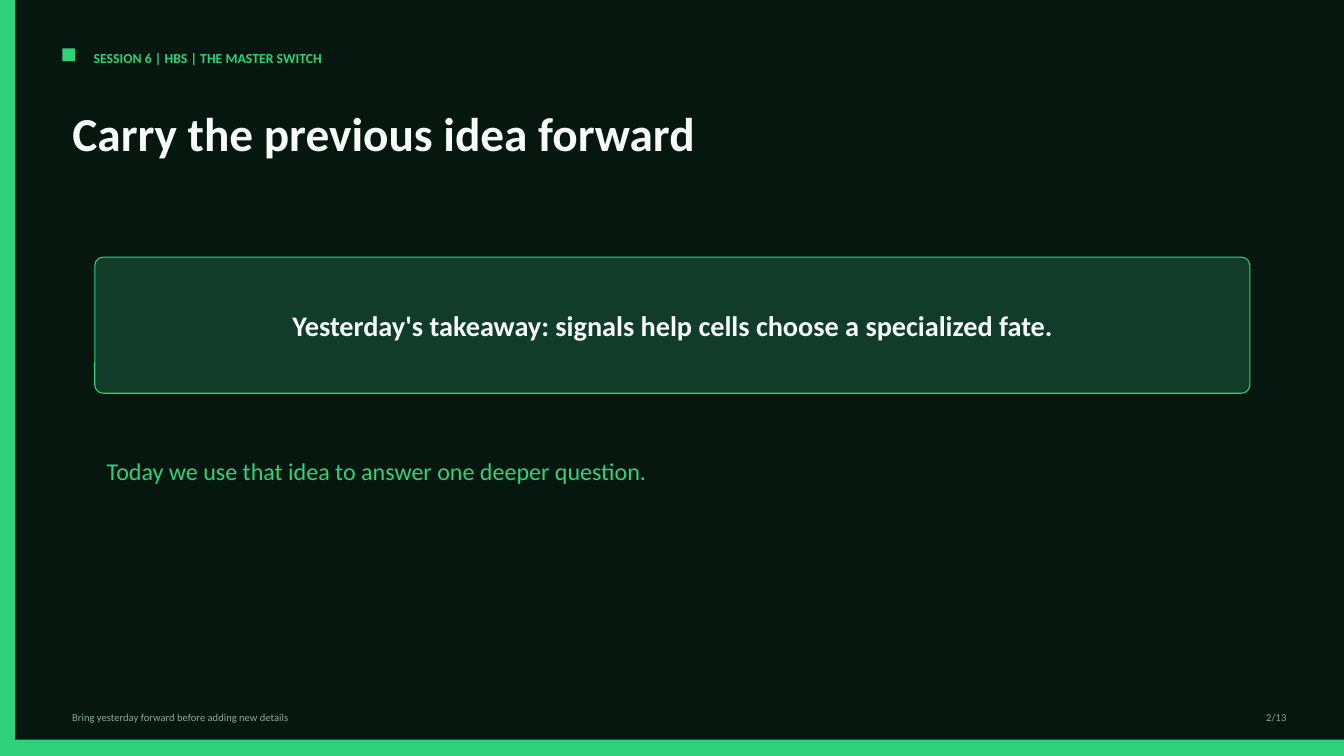
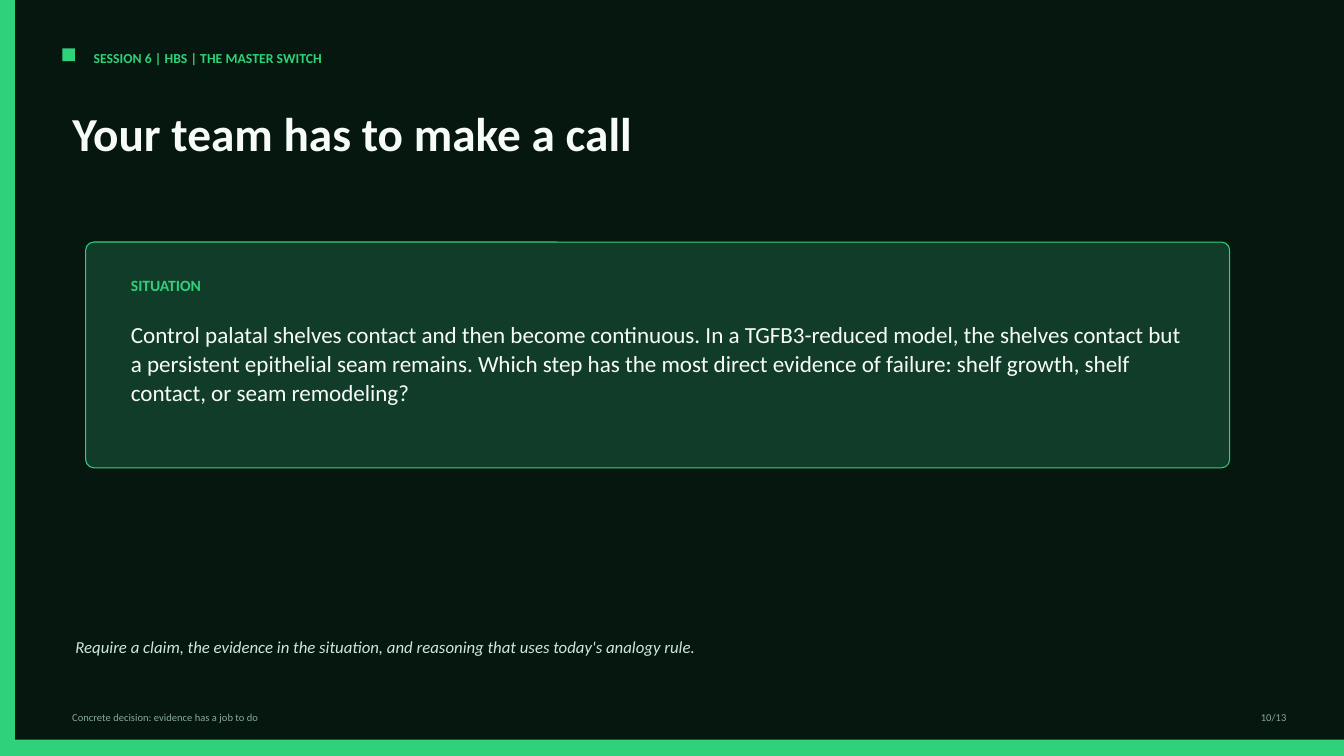
from pptx import Presentation
from pptx.dml.color import RGBColor
from pptx.enum.shapes import MSO_SHAPE
from pptx.enum.text import MSO_ANCHOR, MSO_AUTO_SIZE, PP_ALIGN
from pptx.util import Cm, Pt

RECT, ROUNDED = MSO_SHAPE.RECTANGLE, MSO_SHAPE.ROUNDED_RECTANGLE
TOP, MIDDLE = MSO_ANCHOR.TOP, MSO_ANCHOR.MIDDLE
LEFT, CENTER, RIGHT = PP_ALIGN.LEFT, PP_ALIGN.CENTER, PP_ALIGN.RIGHT
NO_AUTOFIT = MSO_AUTO_SIZE.NONE

BACKGROUND = RGBColor(0x06, 0x17, 0x0F)
GREEN = RGBColor(0x2F, 0xD2, 0x7A)
CARD_GREEN = RGBColor(0x12, 0x3C, 0x2A)
WHITE = RGBColor(0xF7, 0xFC, 0xF9)
PALE = RGBColor(0xCD, 0xE9, 0xDA)
MUTED = RGBColor(0x87, 0xAB, 0x9A)

FONT = "Calibri"
SLIDE_W, SLIDE_H = 33.87, 19.05
SIDE_BAR_W, BOTTOM_BAR_H = 0.38, 0.41
MARGIN, MARKER = 1.57, 0.32
FOOTER_Y, FOOTER_H = 17.78, 0.48
CARD_RADIUS = 0.21

KICKER = "SESSION 6 | HBS | THE MASTER SWITCH"
TOTAL = 13

# Boxes are (left, top, width, height) in centimetres.
SLIDES = [
    dict(
        number=2,
        title="Carry the previous idea forward",
        footer="Bring yesterday forward before adding new details",
        card=(2.39, 6.48, 29.11, 3.43),
        card_text="Yesterday's takeaway: signals help cells choose a specialized fate.",
        texts=[
            ("Today we use that idea to answer one deeper question.",
             (2.44, 11.38, 26.47, 1.17), dict(size=17.2, color=GREEN)),
        ],
    ),
    dict(
        number=10,
        title="Your team has to make a call",
        footer="Concrete decision: evidence has a job to do",
        card=(2.16, 6.1, 28.83, 5.69),
        card_text=None,
        texts=[
            ("SITUATION", (3.05, 6.83, 6.88, 0.66),
             dict(size=11.2, color=GREEN, bold=True)),
            ("Control palatal shelves contact and then become continuous. "
             "In a TGFB3-reduced model, the shelves contact but a persistent "
             "epithelial seam remains. Which step has the most direct evidence "
             "of failure: shelf growth, shelf contact, or seam remodeling?",
             (3.05, 7.92, 27.13, 3.12), dict(size=16.5, spacing=1.05)),
            ("Require a claim, the evidence in the situation, and reasoning "
             "that uses today's analogy rule.",
             (1.65, 15.88, 28.58, 1.17),
             dict(size=12, color=PALE, italic=True, spacing=1.1)),
        ],
    ),
]


def write(sp, text, size, color=WHITE, bold=False, italic=False,
          align=LEFT, anchor=TOP, spacing=None):
    tf = sp.text_frame
    tf.word_wrap = True
    tf.auto_size = NO_AUTOFIT
    tf.vertical_anchor = anchor
    p = tf.paragraphs[0]
    p.alignment = align
    if spacing:
        p.line_spacing = spacing
    r = p.add_run()
    r.text = text
    r.font.name = FONT
    r.font.size = Pt(size)
    r.font.bold = bold
    r.font.italic = italic
    r.font.color.rgb = color


def add_text(s, text, box, **style):
    write(s.shapes.add_textbox(*map(Cm, box)), text, **style)


def add_block(s, box, kind=RECT, fill=GREEN, line=None):
    sp = s.shapes.add_shape(kind, *map(Cm, box))
    sp.shadow.inherit = False
    sp.fill.solid()
    sp.fill.fore_color.rgb = fill
    if line is None:
        sp.line.fill.background()
    else:
        sp.line.color.rgb = line
        sp.line.width = Pt(0.75)
    return sp


def add_card(s, box, text):
    sp = add_block(s, box, ROUNDED, CARD_GREEN, GREEN)
    sp.adjustments[0] = CARD_RADIUS / box[3]
    if text:
        write(sp, text, size=20.2, bold=True, align=CENTER, anchor=MIDDLE)


def add_frame(s, title, footer, number):
    """Add the bars, kicker, title and footer that every slide carries."""
    add_block(s, (0, 0, SIDE_BAR_W, SLIDE_H))
    add_block(s, (0, SLIDE_H - BOTTOM_BAR_H, SLIDE_W, BOTTOM_BAR_H))
    add_block(s, (MARGIN, 1.22, MARKER, MARKER))
    add_text(s, KICKER, (2.11, 1.14, 16.41, 0.64), size=9.8, color=GREEN, bold=True)
    add_text(s, footer, (MARGIN, FOOTER_Y, 23.83, FOOTER_H), size=7.5, color=MUTED)
    add_text(s, f"{number}/{TOTAL}", (30.56, FOOTER_Y, 2.11, FOOTER_H),
             size=7.5, color=MUTED, align=RIGHT)
    sp = s.shapes.title
    sp.left, sp.top, sp.width, sp.height = map(Cm, (MARGIN, 2.64, 29.11, 2.24))
    write(sp, title, size=33.8, bold=True, spacing=0.92)


def main():
    prs = Presentation()
    prs.slide_width, prs.slide_height = Cm(SLIDE_W), Cm(SLIDE_H)
    fill = prs.slide_master.background.fill
    fill.solid()
    fill.fore_color.rgb = BACKGROUND
    title_only = prs.slide_layouts.get_by_name("Title Only")
    for content in SLIDES:
        s = prs.slides.add_slide(title_only)
        add_frame(s, content["title"], content["footer"], content["number"])
        add_card(s, content["card"], content["card_text"])
        for text, box, style in content["texts"]:
            add_text(s, text, box, **style)
    prs.save("out.pptx")


if __name__ == "__main__":
    main()
